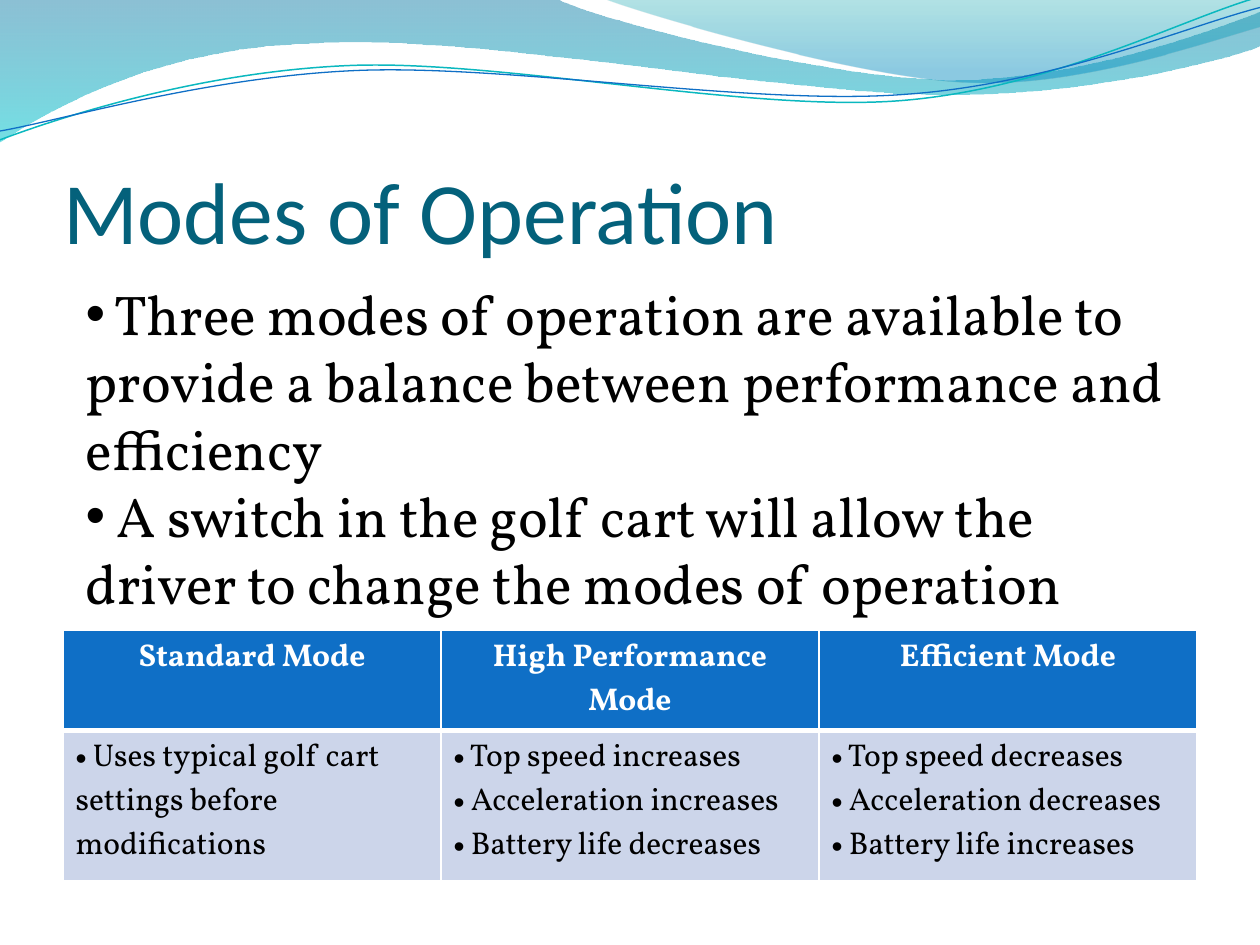
"""Build the golf cart slide on modes of operation."""
import math
import pptx
import pptx.util
import pptx.dml.color
import pptx.enum.text
import pptx.oxml.ns
import lxml.etree

ENUM = pptx.enum.text
SIZE = (1000, 750)
SCALE = 9144
TILT = 2.7

THEME = {
    "title": {"name": "Calibri", "size": 50, "bold": False, "color": "04617B"},
    "body": {"name": "Vollkorn", "size": 32, "bold": False, "color": "000000"},
    "head": {"name": "Vollkorn", "size": 18, "bold": True, "color": "FFFFFF"},
    "cell": {"name": "Vollkorn", "size": 18, "bold": False, "color": "000000"},
    "fills": {"head": "0F6FC6", "cell": "CCD5EA"},
    "edge": "FFFFFF",
}

TITLE = "Modes of Operation"
TITLE_BOX = (50, 83, 900, 125)
POINTS = [
    "Three modes of operation are available to provide a balance between performance and efficiency",
    "A switch in the golf cart will allow the driver to change the modes of operation",
]
BODY_BOX = (58, 217, 900, 279)
MODES = {
    "Standard Mode": ["Uses typical golf cart settings before modifications"],
    "High Performance Mode": ["Top speed increases", "Acceleration increases", "Battery life decreases"],
    "Efficient Mode": ["Top speed decreases", "Acceleration decreases", "Battery life increases"],
}
TABLE_BOX = (50, 500, 900, 197)
ROWS = (78, 119)

BANDS = [
    {"route": [(0, -1), (440, -2), (476, 17, 664, 63, 758, 63), (853, 63, 958, 26, 1000, 9),
               (1001, 36), (983, 44, 870, 76, 746, 75), (622, 75, 382, 28, 257, 34),
               (129, 36, 46, 83, -1, 113)],
     "stops": [(0, "0074A1", 45), (100, "00C6CF", 55)]},
    {"route": [(479, -1), (509, 11, 682, 62, 769, 65), (856, 69, 961, 32, 1000, 21), (1000, 0)],
     "stops": [(0, "00A1A9", 30), (80, "008BBF", 45)]},
]
WAVES = [
    {"route": [(0, 111), (48, 93, 158, 57, 277, 52), (395, 47, 593, 89, 713, 80),
               (833, 71, 938, 15, 998, -2)], "hub": (499, 57), "color": "0AB8BF", "width": 0.85},
    {"route": [(0, 104), (47, 96, 164, 61, 283, 56), (403, 51, 597, 84, 717, 75),
               (836, 67, 941, 21, 1000, 6)], "hub": (500, 59), "color": "0F6FC6", "width": 0.75},
]


def px(num):
    return pptx.util.Emu(round(num * SCALE))


def rgb(code):
    return pptx.dml.color.RGBColor.from_string(code)


def sub(node, tag, **attrs):
    return lxml.etree.SubElement(node, pptx.oxml.ns.qn(tag), **attrs)


def put(item, style):
    for key, val in style.items():
        setattr(item, key, val)


def place(shape, box):
    put(shape, dict(zip(("left", "top", "width", "height"), map(px, box))))


def turn(step, hub, angle):
    cos, sin = math.cos(math.radians(angle)), math.sin(math.radians(angle))
    pairs = [(x - hub[0], y - hub[1]) for x, y in zip(step[::2], step[1::2])]
    return [n for x, y in pairs for n in (hub[0] + x * cos - y * sin, hub[1] + x * sin + y * cos)]


def draw(shapes, route, close):
    spots = [(px(x), px(y)) for step in route for x, y in zip(step[::2], step[1::2])]
    maker = shapes.build_freeform(*spots[0], scale=1.0)
    maker.add_line_segments(spots[1:], close=close)
    shape = maker.convert_to_shape()
    shape.shadow.inherit = False
    lines = shape._element.spPr.iter(pptx.oxml.ns.qn("a:lnTo"))
    rest = iter(list(lines))
    for step in route[1:]:
        if len(step) == 2:
            next(rest)
            continue
        group = [next(rest) for _ in range(3)]
        curve = sub(group[0].getparent(), "a:cubicBezTo")
        group[0].addprevious(curve)
        for line in group:
            curve.append(line[0])
            line.getparent().remove(line)
    return shape


def add_band(slide, band):
    shape = draw(slide.shapes, band["route"], True)
    shape.line.fill.background()
    shape.fill.gradient()
    shape.fill.gradient_angle = 270
    for stop, (spot, code, _) in zip(shape.fill.gradient_stops, band["stops"]):
        stop.position = spot / 100
        stop.color.rgb = rgb(code)
    tints = shape._element.spPr.iter(pptx.oxml.ns.qn("a:srgbClr"))
    for tint, (_, _, alpha) in zip(tints, band["stops"]):
        sub(tint, "a:alpha", val=str(alpha * 1000))


def add_wave(group, wave):
    route = [turn(step, wave["hub"], TILT) for step in wave["route"]]
    shape = draw(group.shapes, route, False)
    shape.rotation = 360 - TILT
    shape.fill.background()
    shape.line.color.rgb = rgb(wave["color"])
    shape.line.width = pptx.util.Pt(wave["width"])


def write(frame, lines, style, align, dots=False):
    for num, line in enumerate(lines):
        para = frame.add_paragraph() if num else frame.paragraphs[0]
        put(para, {"alignment": align, "space_before": pptx.util.Pt(0)})
        run = para.add_run()
        run.text = " " + line if dots else line
        put(run.font, {"name": style["name"], "size": pptx.util.Pt(style["size"]), "bold": style["bold"]})
        run.font.color.rgb = rgb(style["color"])
        if dots:
            props = para._p.get_or_add_pPr()
            props.set("marL", "0")
            props.set("indent", "0")
            sub(props, "a:buFont", typeface="Arial")
            sub(props, "a:buChar", char="•")


def add_edges(cell, base):
    props = cell._tc.get_or_add_tcPr()
    widths = {"a:lnL": 1, "a:lnR": 1, "a:lnT": 1, "a:lnB": base}
    for spot, (tag, width) in enumerate(widths.items()):
        edge = sub(props, tag, w=str(pptx.util.Pt(width)))
        sub(sub(edge, "a:solidFill"), "a:srgbClr", val=THEME["edge"])
        props.insert(spot, edge)


def add_modes(slide):
    table = slide.shapes.add_table(len(ROWS), len(MODES), *map(px, TABLE_BOX)).table
    table.horz_banding = False
    for row, high in zip(table.rows, ROWS):
        row.height = px(high)
    for col, (name, facts) in enumerate(MODES.items()):
        table.columns[col].width = px(TABLE_BOX[2] / len(MODES))
        parts = [("head", [name], ENUM.PP_ALIGN.CENTER, 3), ("cell", facts, ENUM.PP_ALIGN.LEFT, 1)]
        for row, (kind, lines, align, base) in enumerate(parts):
            cell = table.cell(row, col)
            cell.fill.solid()
            cell.fill.fore_color.rgb = rgb(THEME["fills"][kind])
            add_edges(cell, base)
            write(cell.text_frame, lines, THEME[kind], align, kind == "cell")


def main():
    deck = pptx.Presentation()
    put(deck, {"slide_width": px(SIZE[0]), "slide_height": px(SIZE[1])})
    slide = deck.slides.add_slide(deck.slide_layouts[1])
    title, body = slide.placeholders
    for band in BANDS:
        add_band(slide, band)
    group = slide.shapes.add_group_shape()
    for wave in WAVES:
        add_wave(group, wave)

    tree = slide.shapes._spTree
    tree.append(title._element)
    place(title, TITLE_BOX)
    put(title.text_frame, {"vertical_anchor": ENUM.MSO_ANCHOR.BOTTOM, "auto_size": ENUM.MSO_AUTO_SIZE.NONE,
                           "margin_left": 0, "margin_top": px(5), "margin_right": 0, "margin_bottom": 0})
    write(title.text_frame, [TITLE], THEME["title"], ENUM.PP_ALIGN.LEFT)

    add_modes(slide)
    tree.append(body._element)
    place(body, BODY_BOX)
    put(body.text_frame, {"word_wrap": True, "auto_size": ENUM.MSO_AUTO_SIZE.SHAPE_TO_FIT_TEXT})
    write(body.text_frame, POINTS, THEME["body"], ENUM.PP_ALIGN.LEFT, True)
    deck.save("out.pptx")


if __name__ == "__main__":
    main()
